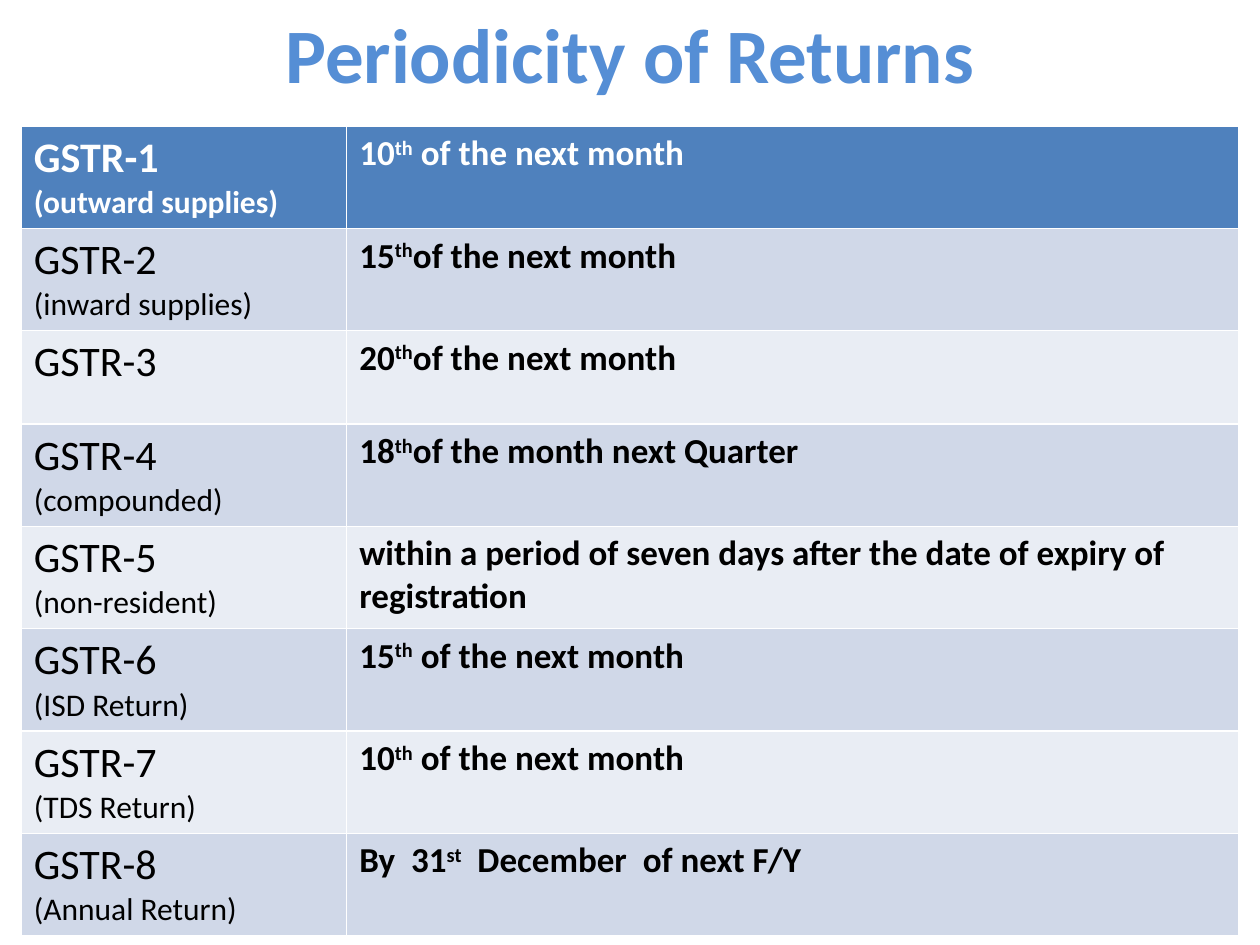
"""Build a slide with a table of GST return due dates."""
from pptx import Presentation
from pptx.dml.color import RGBColor
from pptx.enum.text import MSO_ANCHOR, PP_ALIGN
from pptx.util import Cm, Pt

CENTER = PP_ALIGN.CENTER
MIDDLE = MSO_ANCHOR.MIDDLE
TITLE_ONLY = 5
COLORS = {
    "title": "558ED5",
    "header": "4F81BD",
    "odd": "D0D8E8",
    "even": "E9EDF4",
    "white": "FFFFFF",
    "black": "000000",
}
RETURNS = [
    ("GSTR-1", "(outward supplies)", ("10", "th", " of the next month")),
    ("GSTR-2", "(inward supplies)", ("15", "th", "of the next month")),
    ("GSTR-3", None, ("20", "th", "of the next month")),
    ("GSTR-4", "(compounded)", ("18", "th", "of the month next Quarter")),
    ("GSTR-5", "(non-resident)",
     ("within a period of seven days after the date of expiry of registration",)),
    ("GSTR-6", "(ISD Return)", ("15", "th", " of the next month")),
    ("GSTR-7", "(TDS Return)", ("10", "th", " of the next month")),
    ("GSTR-8", "(Annual Return)", ("By  31", "st", "  December  of next F/Y")),
]


class SlideBuilder:
    """Holds the style and the current slide."""

    def __init__(self, presentation, font_name="Calibri"):
        self.font_name = font_name
        self.slide = presentation.slides.add_slide(presentation.slide_layouts[TITLE_ONLY])

    def format_runs(self, paragraph, size, color, bold):
        for run in paragraph.runs:
            run.font.name = self.font_name
            run.font.size = Pt(size)
            run.font.bold = bold
            run.font.color.rgb = RGBColor.from_string(COLORS[color])

    def title(self, text, left, top, width, height):
        shape = self.slide.shapes.title
        shape.left, shape.top, shape.width, shape.height = left, top, width, height
        shape.text_frame.text = text
        shape.text_frame.vertical_anchor = MIDDLE
        paragraph = shape.text_frame.paragraphs[0]
        paragraph.alignment = CENTER
        self.format_runs(paragraph, 44, "title", True)

    def return_cell(self, cell, name, note, color, bold):
        cell.text_frame.text = f"{name}\n{note}" if note else name
        for paragraph, size in zip(cell.text_frame.paragraphs, (24, 18)):
            self.format_runs(paragraph, size, color, bold)

    def due_cell(self, cell, parts, color):
        paragraph = cell.text_frame.paragraphs[0]
        paragraph.text = parts[0]
        for part in parts[1:]:
            paragraph.add_run().text = part
        self.format_runs(paragraph, 20, color, True)
        for ordinal in paragraph.runs[1:2]:
            ordinal._r.get_or_add_rPr().set("baseline", "30000")

    def returns_table(self, returns, left, top, column_widths, row_height, short_height):
        table = self.slide.shapes.add_table(
            len(returns), len(column_widths), left, top,
            sum(column_widths), row_height * len(returns)).table
        for column, width in zip(table.columns, column_widths):
            column.width = width
        for index, (name, note, due) in enumerate(returns):
            is_header = index == 0
            color = "white" if is_header else "black"
            fill = "header" if is_header else ("even", "odd")[index % 2]
            table.rows[index].height = row_height if note else short_height
            for cell in table.rows[index].cells:
                cell.fill.solid()
                cell.fill.fore_color.rgb = RGBColor.from_string(COLORS[fill])
            self.return_cell(table.cell(index, 0), name, note, color, is_header)
            self.due_cell(table.cell(index, 1), due, color)


def main():
    presentation = Presentation()
    presentation.slide_width = Cm(25.4)
    presentation.slide_height = Cm(19.05)
    builder = SlideBuilder(presentation)
    builder.title("Periodicity of Returns", Cm(0.64), Cm(0), Cm(24.13), Cm(2.12))
    builder.returns_table(RETURNS, Cm(0.43), Cm(2.54), (Cm(6.56), Cm(17.99)),
                          Cm(2.01), Cm(1.88))
    presentation.save("out.pptx")


if __name__ == "__main__":
    main()
